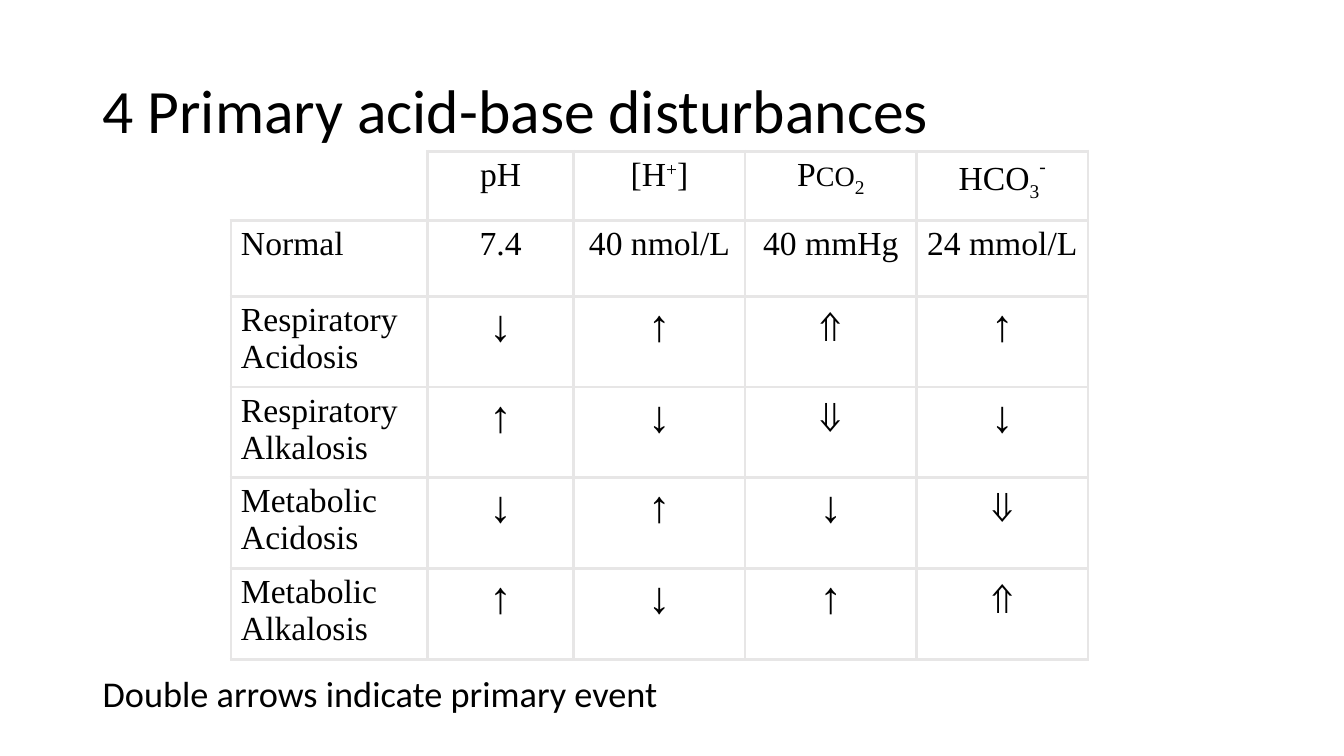
from lxml import etree
from pptx import Presentation, util as u
from pptx.dml.color import RGBColor
from pptx.enum import text as t
from pptx.oxml.ns import qn

COLORS = {"ink": "000000", "rule": "E7E6E6"}
SANS, SERIF = "Calibri", "Times New Roman"
WIDE, HIGH = 13.33, 7.5

COLS = [1.95, 1.45, 1.7, 1.7, 1.7]
ROWS = [0.69, 0.75] + [0.9] * 4
# A cell is a list of runs: (text, size, baseline in percent)
HEAD = [
    [],
    [("pH", 24, 0)],
    [("[H", 24, 0), ("+", 24, 30), ("]", 24, 0)],
    [("P", 24, 0), ("CO", 20, 0), ("2", 24, -25)],
    [("HCO", 24, 0), ("3", 24, -25), ("-", 24, 50)],
]
NORMAL = ["Normal", "7.4", "40 nmol/L", "40 mmHg", "24 mmol/L"]
STATES = {
    "Respiratory Acidosis": "↓↑⇑↑",
    "Respiratory Alkalosis": "↑↓⇓↓",
    "Metabolic Acidosis": "↓↑↓⇓",
    "Metabolic Alkalosis": "↑↓↑⇑",
}


def style(para, name, size):
    font = para.font
    font.name, font.size = name, u.Pt(size)
    font.color.rgb = RGBColor.from_string(COLORS["ink"])


def add_line(slide, box, words, size, gap, anchor):
    """One line of sans text in its box."""
    frame = slide.shapes.add_textbox(*map(u.Inches, box)).text_frame
    frame.word_wrap = True
    frame.vertical_anchor = anchor
    para = frame.paragraphs[0]
    para.text, para.line_spacing = words, gap
    style(para, SANS, size)


def set_edges(cell, shown):
    """Rule the named sides and leave the others open."""
    props = cell._tc.get_or_add_tcPr()
    for i, side in enumerate("LRTB"):
        edge = etree.Element(qn(f"a:ln{side}"), w=str(u.Pt(2.25)))
        if side in shown:
            fill = etree.SubElement(edge, qn("a:solidFill"))
            etree.SubElement(fill, qn("a:srgbClr"), val=COLORS["rule"])
        else:
            etree.SubElement(edge, qn("a:noFill"))
        props.insert(i, edge)


def fill_cell(cell, runs, align):
    para = cell.text_frame.paragraphs[0]
    para.alignment = align
    style(para, SERIF, 24)
    for words, size, base in runs:
        run = para.add_run()
        run.text, run.font.size = words, u.Pt(size)
        if base:
            run.font._element.set("baseline", str(base * 1000))


def add_grid(slide, left, top):
    """Table of disturbances, with an open top left corner."""
    rows = [HEAD, [[(word, 24, 0)] for word in NORMAL]]
    for state, arrows in STATES.items():
        rows.append([[(state, 24, 0)]] + [[(a, 32, 0)] for a in arrows])
    box = map(u.Inches, (left, top, sum(COLS), sum(ROWS)))
    table = slide.shapes.add_table(len(ROWS), len(COLS), *box).table
    table.first_row = table.horz_banding = False
    for col, width in zip(table.columns, COLS):
        col.width = u.Inches(width)
    for r, (row, height) in enumerate(zip(table.rows, ROWS)):
        row.height = u.Inches(height)
        for c, cell in enumerate(row.cells):
            cell.fill.background()
            set_edges(cell, "LRTB" if r or c else "RB")
            fill_cell(cell, rows[r][c], t.PP_ALIGN.CENTER if c else t.PP_ALIGN.LEFT)


def main():
    deck = Presentation()
    deck.slide_width, deck.slide_height = u.Inches(WIDE), u.Inches(HIGH)
    slide = deck.slides.add_slide(deck.slide_layouts[6])
    left, width = 0.92, 11.5
    # Title, table, footnote
    add_line(slide, (left, 0.4, width, 1.45), "4 Primary acid-base disturbances",
             44, 0.9, t.MSO_ANCHOR.MIDDLE)
    add_grid(slide, 2.29, 1.5)
    add_line(slide, (left, 6.73, width, 0.43), "Double arrows indicate primary event",
             25.9, 0.7, t.MSO_ANCHOR.TOP)
    deck.save("out.pptx")


if __name__ == "__main__":
    main()
